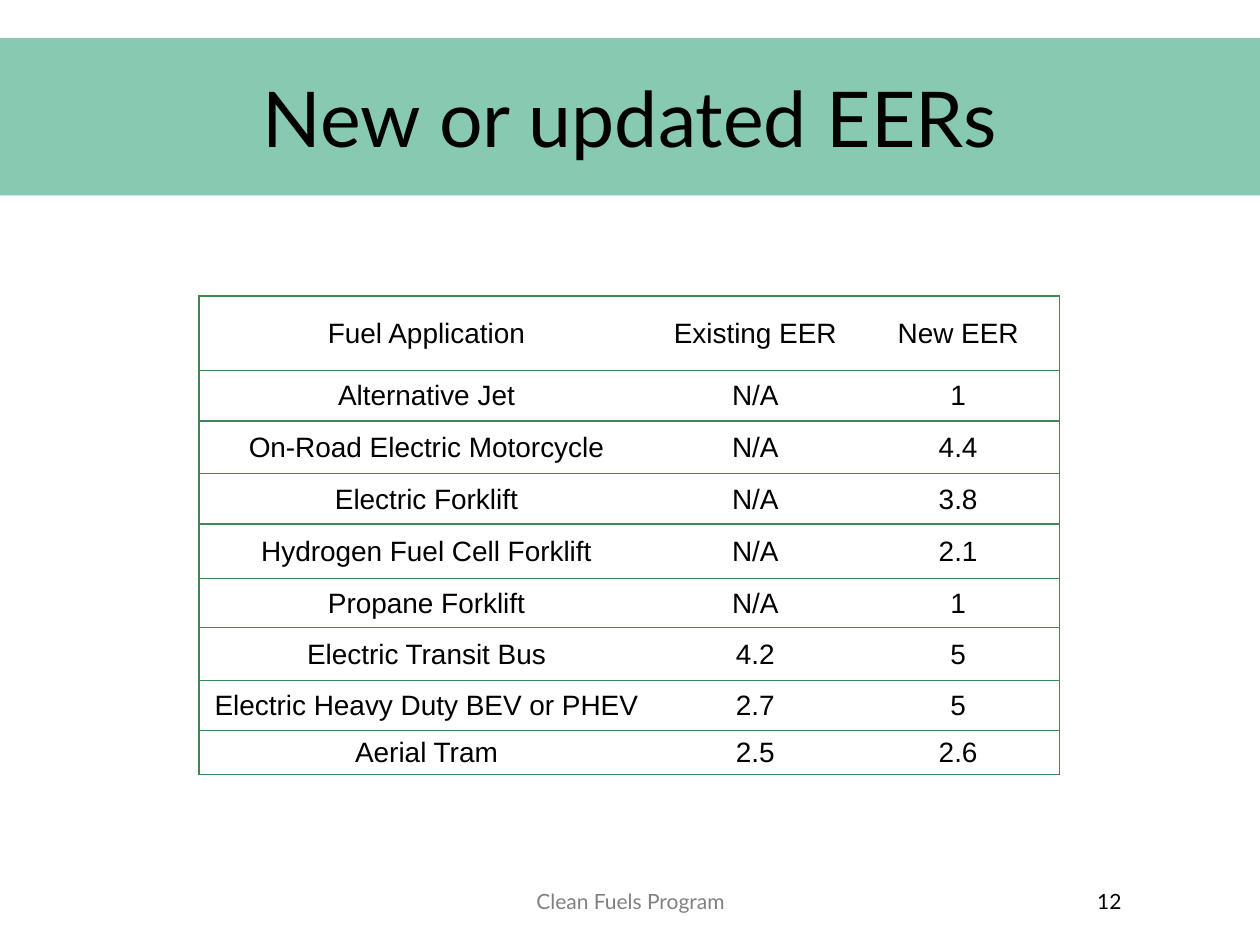
import lxml.etree
import pptx
import pptx.dml.color
import pptx.enum.text
import pptx.oxml.ns
import pptx.util

Inches = pptx.util.Inches
ALIGN = pptx.enum.text.PP_ALIGN
MIDDLE = pptx.enum.text.MSO_ANCHOR.MIDDLE

BLACK, WHITE, GREY = "000000", "FFFFFF", "808080"
BAND_GREEN, RULE_GREEN = "88CAB1", "3E8853"

COLUMN_WIDTHS = [3.61, 1.61, 1.61]
ROW_HEIGHTS = [0.59, 0.4, 0.42, 0.4, 0.43, 0.39, 0.42, 0.4, 0.35]
EER_ROWS = [
    ("Fuel Application", "Existing EER", "New EER"),
    ("Alternative Jet", "N/A", "1"),
    ("On-Road Electric Motorcycle", "N/A", "4.4"),
    ("Electric Forklift", "N/A", "3.8"),
    ("Hydrogen Fuel Cell Forklift", "N/A", "2.1"),
    ("Propane Forklift", "N/A", "1"),
    ("Electric Transit Bus", "4.2", "5"),
    ("Electric Heavy Duty BEV or PHEV", "2.7", "5"),
    ("Aerial Tram", "2.5", "2.6"),
]


def rgb(hex_color):
    """Turn a hex string into a colour."""
    return pptx.dml.color.RGBColor.from_string(hex_color)


def write(frame, text, size, font_name, color, align):
    """Put one formatted paragraph into a text frame."""
    paragraph = frame.paragraphs[0]
    paragraph.text = text
    paragraph.alignment = align
    paragraph.font.size = pptx.util.Pt(size)
    paragraph.font.name = font_name
    paragraph.font.color.rgb = rgb(color)


def set_borders(cell, visible_sides):
    """Draw the named cell sides (L, R, T, B) in green and hide the others."""
    properties = cell._tc.get_or_add_tcPr()
    for index, side in enumerate("LRTB"):
        line = lxml.etree.Element(pptx.oxml.ns.qn(f"a:ln{side}"), w=str(pptx.util.Pt(1)))
        if side in visible_sides:
            fill = lxml.etree.SubElement(line, pptx.oxml.ns.qn("a:solidFill"))
            lxml.etree.SubElement(fill, pptx.oxml.ns.qn("a:srgbClr"), val=RULE_GREEN)
        else:
            lxml.etree.SubElement(line, pptx.oxml.ns.qn("a:noFill"))
        properties.insert(index, line)


def add_title(slide, left, top, width, height):
    """Move the title placeholder into a full-width green band."""
    title = slide.shapes.title
    title.left, title.top, title.width, title.height = map(Inches, (left, top, width, height))
    title.fill.solid()
    title.fill.fore_color.rgb = rgb(BAND_GREEN)
    title.text_frame.vertical_anchor = MIDDLE
    write(title.text_frame, "New or updated EERs", 44, "Lato", BLACK, ALIGN.CENTER)


def add_eer_table(slide, left, top):
    """Add the table of existing and new EERs with horizontal rules and a frame."""
    width, height = sum(COLUMN_WIDTHS), sum(ROW_HEIGHTS)
    eer_table = slide.shapes.add_table(
        len(EER_ROWS), len(COLUMN_WIDTHS),
        Inches(left), Inches(top), Inches(width), Inches(height)).table
    for column, column_width in zip(eer_table.columns, COLUMN_WIDTHS):
        column.width = Inches(column_width)
    side_rules = ["LTB", "TB", "RTB"]
    for row, row_height, entries in zip(eer_table.rows, ROW_HEIGHTS, EER_ROWS):
        row.height = Inches(row_height)
        for cell, entry, sides in zip(row.cells, entries, side_rules):
            cell.margin_left = cell.margin_right = cell.margin_top = Inches(0.01)
            cell.margin_bottom = 0
            cell.vertical_anchor = MIDDLE
            cell.fill.solid()
            cell.fill.fore_color.rgb = rgb(WHITE)
            write(cell.text_frame, entry, 16, "Arial", BLACK, ALIGN.CENTER)
            set_borders(cell, sides)


def add_footer_text(slide, left, top, width, height, text, color, align):
    """Add one piece of the footer line."""
    frame = slide.shapes.add_textbox(*map(Inches, (left, top, width, height))).text_frame
    frame.word_wrap = True
    frame.vertical_anchor = MIDDLE
    write(frame, text, 12, "Lato", color, align)


def add_footer(slide, top, height):
    """Add the programme name and the slide number."""
    add_footer_text(slide, 3.42, top, 3.17, height, "Clean Fuels Program", GREY, ALIGN.CENTER)
    add_footer_text(slide, 7.17, top, 1.83, height, "12", BLACK, ALIGN.RIGHT)


def main():
    """Build the slide and save it."""
    presentation = pptx.Presentation()
    presentation.slide_width, presentation.slide_height = Inches(10), Inches(7.5)
    slide = presentation.slides.add_slide(presentation.slide_layouts[5])
    add_title(slide, 0, 0.3, 10, 1.25)
    add_eer_table(slide, 1.58, 2.35)
    add_footer(slide, 6.95, 0.4)
    presentation.save("out.pptx")


if __name__ == "__main__":
    main()
